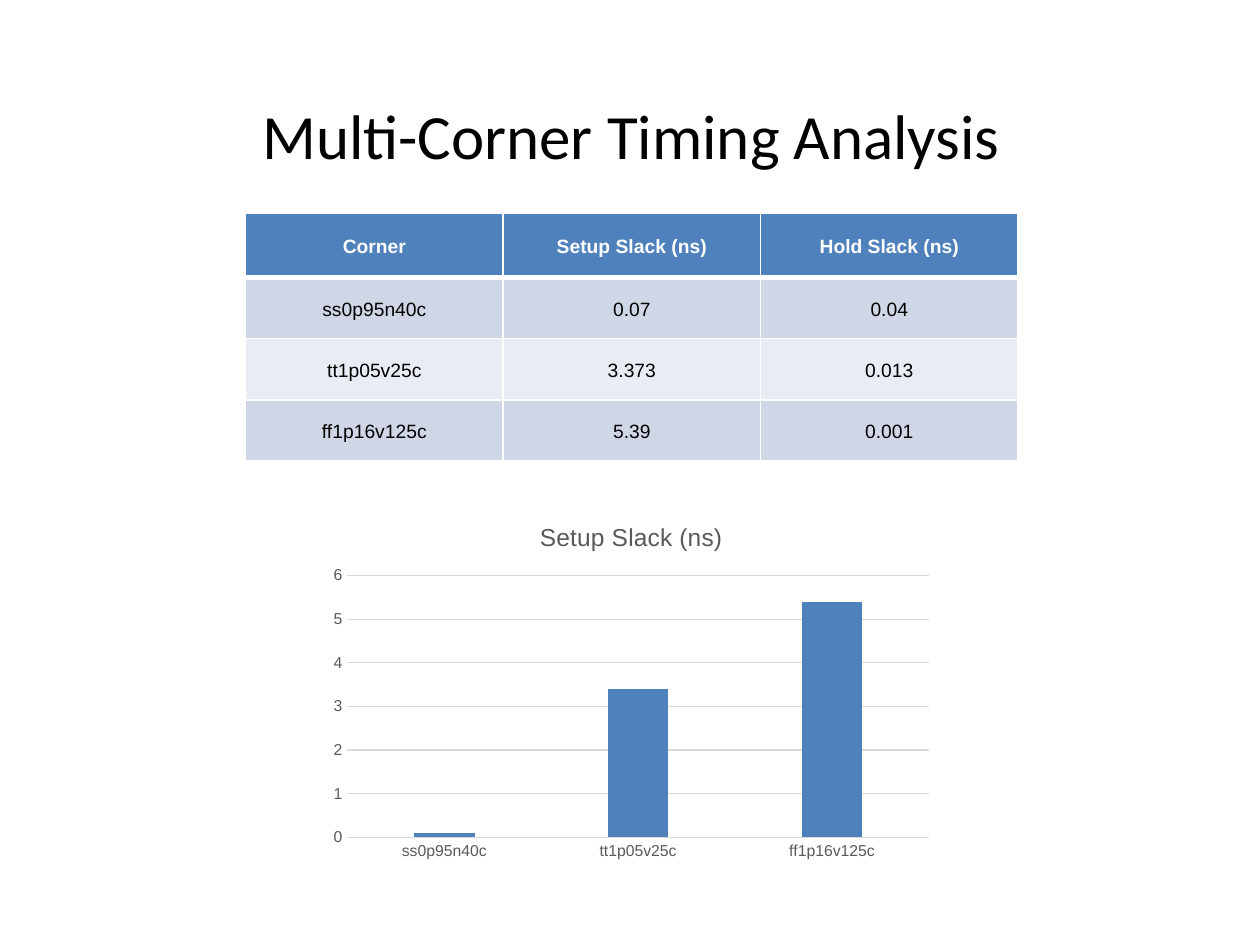
"""Build a slide with a multi-corner timing table and a setup slack chart."""
from dataclasses import dataclass

from lxml.etree import SubElement
from pptx import Presentation
from pptx.chart.data import CategoryChartData
from pptx.dml.color import RGBColor
from pptx.enum.chart import XL_CHART_TYPE as ChartType, XL_TICK_MARK as TickMark
from pptx.enum.text import MSO_ANCHOR as Anchor, PP_ALIGN as Align
from pptx.oxml import parse_xml
from pptx.oxml.ns import nsdecls, qn
from pptx.util import Inches, Pt

TITLE = "Multi-Corner Timing Analysis"
HEADERS = ["Corner", "Setup Slack (ns)", "Hold Slack (ns)"]
CORNERS = [
    ("ss0p95n40c", 0.07, 0.04),
    ("tt1p05v25c", 3.373, 0.013),
    ("ff1p16v125c", 5.39, 0.001),
]

WIDTH, HEIGHT = 10, 7.5
TITLE_BOX = (0.51, 0.44, 9, 1.25)
TABLE_BOX = (1.95, 1.69, 6.13, 1.97)
CHART_BOX = (2.55, 3.99, 4.92, 2.9)
HEADER_HEIGHT = 0.51


@dataclass(frozen=True)
class Theme:
    accent: str = "4F81BD"
    bands: tuple = ("CFD7E7", "E8ECF4")
    white: str = "FFFFFF"
    black: str = "000000"
    gray: str = "595959"
    grid: str = "D9D9D9"
    heading: str = "Calibri"
    body: str = "Arial"
    title_size: float = 36
    table_size: float = 11
    chart_title_size: float = 14
    chart_size: float = 10
    axis_size: float = 9


THEME = Theme()


def box(lengths):
    return [Inches(length) for length in lengths]


def set_font(font, size, color, name=THEME.body, bold=False):
    font.name, font.size, font.bold = name, Pt(size), bold
    font.color.rgb = RGBColor.from_string(color)


def write_text(frame, text, size, color, name=THEME.body, bold=False,
               line_spacing=None, space_after=None):
    paragraph = frame.paragraphs[0]
    paragraph.alignment = Align.CENTER
    paragraph.line_spacing = line_spacing
    if space_after is not None:
        paragraph.space_after = Pt(space_after)
    run = paragraph.add_run()
    run.text = text
    set_font(run.font, size, color, name, bold)


def set_borders(cell, **widths):
    properties = cell._tc.get_or_add_tcPr()
    for index, side in enumerate("LRTB"):
        line = parse_xml(f'<a:ln{side} {nsdecls("a")} w="{Pt(widths.get(side, 1))}"/>')
        fill = SubElement(line, qn("a:solidFill"))
        SubElement(fill, qn("a:srgbClr"), val=THEME.white)
        properties.insert(index, line)


def add_title(slide):
    title = slide.shapes.title
    title.left, title.top, title.width, title.height = box(TITLE_BOX)
    title.text_frame.vertical_anchor = Anchor.MIDDLE
    write_text(title.text_frame, TITLE, THEME.title_size, THEME.black, THEME.heading)


def add_timing_table(slide):
    rows = [HEADERS, *CORNERS]
    table = slide.shapes.add_table(len(rows), len(HEADERS), *box(TABLE_BOX)).table
    row_height = (TABLE_BOX[3] - HEADER_HEIGHT) / len(CORNERS)
    for column in table.columns:
        column.width = Inches(TABLE_BOX[2] / len(HEADERS))
    for row_index, values in enumerate(rows):
        header = row_index == 0
        table.rows[row_index].height = Inches(HEADER_HEIGHT if header else row_height)
        fill = THEME.accent if header else THEME.bands[(row_index - 1) % 2]
        for column_index, value in enumerate(values):
            cell = table.cell(row_index, column_index)
            cell.vertical_anchor = Anchor.MIDDLE
            cell.margin_left = cell.margin_right = Inches(0.03)
            cell.margin_top = cell.margin_bottom = Inches(0.02)
            cell.fill.solid()
            cell.fill.fore_color.rgb = RGBColor.from_string(fill)
            set_borders(cell, B=3 if header else 1, T=3 if row_index == 1 else 1)
            write_text(cell.text_frame, str(value), THEME.table_size,
                       THEME.white if header else THEME.black, bold=header,
                       line_spacing=1.15, space_after=10)


def style_line(line):
    line.color.rgb = RGBColor.from_string(THEME.grid)
    line.width = Pt(0.75)


def add_slack_chart(slide):
    data = CategoryChartData()
    data.categories = [corner for corner, _, _ in CORNERS]
    data.add_series(HEADERS[1], [round(setup, 1) for _, setup, _ in CORNERS])
    chart = slide.shapes.add_chart(
        ChartType.COLUMN_CLUSTERED, *box(CHART_BOX), data).chart
    set_font(chart.font, THEME.chart_size, THEME.black)
    chart.has_legend = False
    chart.has_title = True
    write_text(chart.chart_title.text_frame, HEADERS[1],
               THEME.chart_title_size, THEME.gray)
    chart.chart_title.include_in_layout = False

    for axis in (chart.category_axis, chart.value_axis):
        axis.major_tick_mark = axis.minor_tick_mark = TickMark.NONE
        set_font(axis.tick_labels.font, THEME.axis_size, THEME.gray)
    style_line(chart.category_axis.format.line)
    chart.value_axis.format.line.fill.background()
    style_line(chart.value_axis.major_gridlines.format.line)

    plot = chart.plots[0]
    plot.vary_by_categories = False
    plot.gap_width, plot.overlap = 219, -27
    fill = plot.series[0].format.fill
    fill.solid()
    fill.fore_color.rgb = RGBColor.from_string(THEME.accent)


def main():
    presentation = Presentation()
    presentation.slide_width, presentation.slide_height = box((WIDTH, HEIGHT))
    slide = presentation.slides.add_slide(
        presentation.slide_layouts.get_by_name("Title Only"))
    add_title(slide)
    add_timing_table(slide)
    add_slack_chart(slide)
    presentation.save("out.pptx")


if __name__ == "__main__":
    main()
